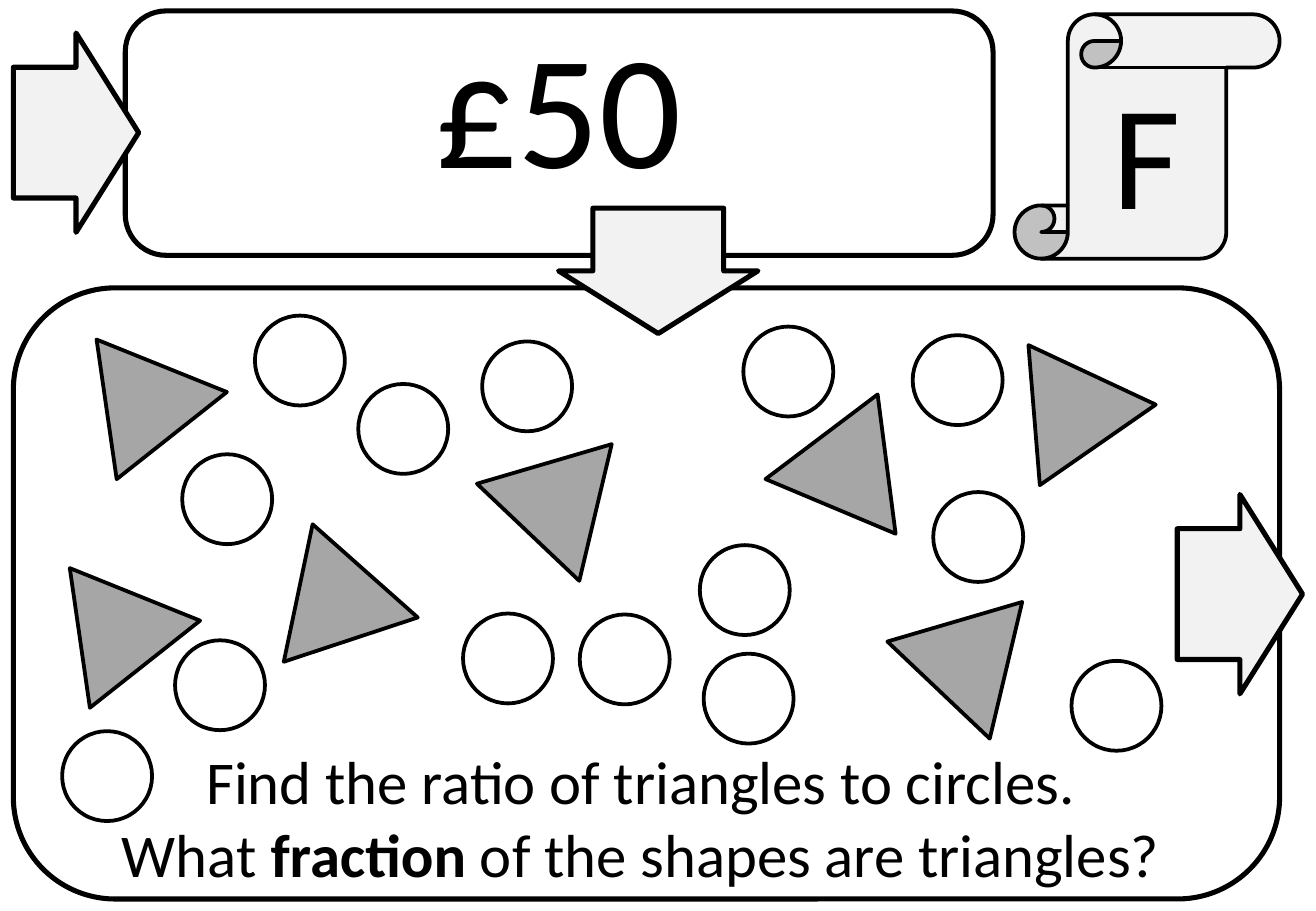
from pptx import Presentation
from pptx.dml.color import RGBColor
from pptx.enum.shapes import MSO_SHAPE as Preset
from pptx.enum.text import MSO_ANCHOR as Anchor, MSO_AUTO_SIZE as AutoSize, PP_ALIGN as Align
from pptx.util import Cm, Pt
from lxml.etree import SubElement
from pptx.oxml.ns import qn

BLACK, PALE, GREY = "000000", "F2F2F2", "A6A6A6"


def add_outlined(preset, left, top, width, height, fill=None, line=2.25, rotation=0):
    shape = slide.shapes.add_shape(preset, Cm(left), Cm(top), Cm(width), Cm(height))
    shape.rotation = rotation
    shape.shadow.inherit = False
    if fill:
        shape.fill.solid()
        shape.fill.fore_color.rgb = RGBColor.from_string(fill)
    else:
        shape.fill.background()
    shape.line.color.rgb = RGBColor.from_string(BLACK)
    shape.line.width = Pt(line)
    return shape


def format_text(shape, size, anchor, wrap):
    frame = shape.text_frame
    frame.auto_size = AutoSize.NONE
    frame.word_wrap = wrap
    frame.vertical_anchor = anchor
    for paragraph in frame.paragraphs:
        paragraph.alignment = Align.CENTER
        paragraph.space_before = Pt(0)
        for run in paragraph.runs:
            run.font.name = "Calibri"
            run.font.size = Pt(size)
            run.font.color.rgb = RGBColor.from_string(BLACK)


deck = Presentation()
deck.slide_width, deck.slide_height = Cm(27.51), Cm(19.05)
slide = deck.slides.add_slide(deck.slide_layouts[1])

# Answer to the previous card
answer = slide.shapes.title
answer.left, answer.top, answer.width, answer.height = Cm(8.81), Cm(0), Cm(5.72), Cm(4.37)
answer.text_frame.text = "£50"
format_text(answer, 96, Anchor.TOP, False)

# Question
question = slide.placeholders[1]
question.left, question.top, question.width, question.height = Cm(2.08), Cm(15.42), Cm(22.63), Cm(3.33)
question.text_frame.text = "Find the ratio of triangles to circles."
fraction_line = question.text_frame.add_paragraph()
for words, bold in [("What ", False), ("fraction", True), (" of the shapes are triangles?", False)]:
    run = fraction_line.add_run()
    run.text = words
    run.font.bold = bold
format_text(question, 36, Anchor.TOP, False)
for paragraph in question.text_frame.paragraphs:
    properties = paragraph._p.get_or_add_pPr()
    properties.set("marL", "0")
    properties.set("indent", "0")
    SubElement(properties, qn("a:buNone"))

# Question and answer frames
add_outlined(Preset.ROUNDED_RECTANGLE, 0.28, 6.02, 26.47, 12.78, line=3)
add_outlined(Preset.ROUNDED_RECTANGLE, 2.62, 0.23, 18.14, 5.11, line=3)

# Arrows leading from card to card
for left, top, rotation in [(24.61, 10.34, 0), (12.45, 3.58, 90), (0.28, 0.69, 0)]:
    arrow = add_outlined(Preset.RIGHT_ARROW, left, top, 2.62, 4.17, PALE, 3, rotation)
    arrow.adjustments[0] = 0.656

# Scroll with the card letter
scroll = add_outlined(Preset.VERTICAL_SCROLL, 21.21, 0.3, 5.54, 5.11, PALE)
scroll.adjustments[0] = 0.218
scroll.text_frame.text = "F"
format_text(scroll, 88, Anchor.MIDDLE, True)

# Triangles to count
triangles = [
    (2.01, 7.11, 81.8), (10.44, 8.94, 43.5), (5.46, 10.9, 341.7), (20.75, 6.99, 325.2),
    (16.38, 8.15, 22.8), (19.02, 12.24, 43.5), (1.45, 11.89, 81.8),
]
for left, top, rotation in triangles:
    add_outlined(Preset.ISOSCELES_TRIANGLE, left, top, 2.95, 2.54, GREY, rotation=rotation)

# Circles to count
circles = [
    (7.49, 8.03), (10.08, 7.14), (14.63, 11.4), (9.68, 12.83), (15.54, 6.83),
    (19.51, 10.29), (3.81, 9.5), (5.33, 6.6), (22.4, 13.82), (14.71, 13.67),
    (12.12, 12.85), (19.08, 7.01), (3.66, 13.39), (1.3, 15.29),
]
for left, top in circles:
    add_outlined(Preset.OVAL, left, top, 1.88, 1.88)

deck.save("out.pptx")
